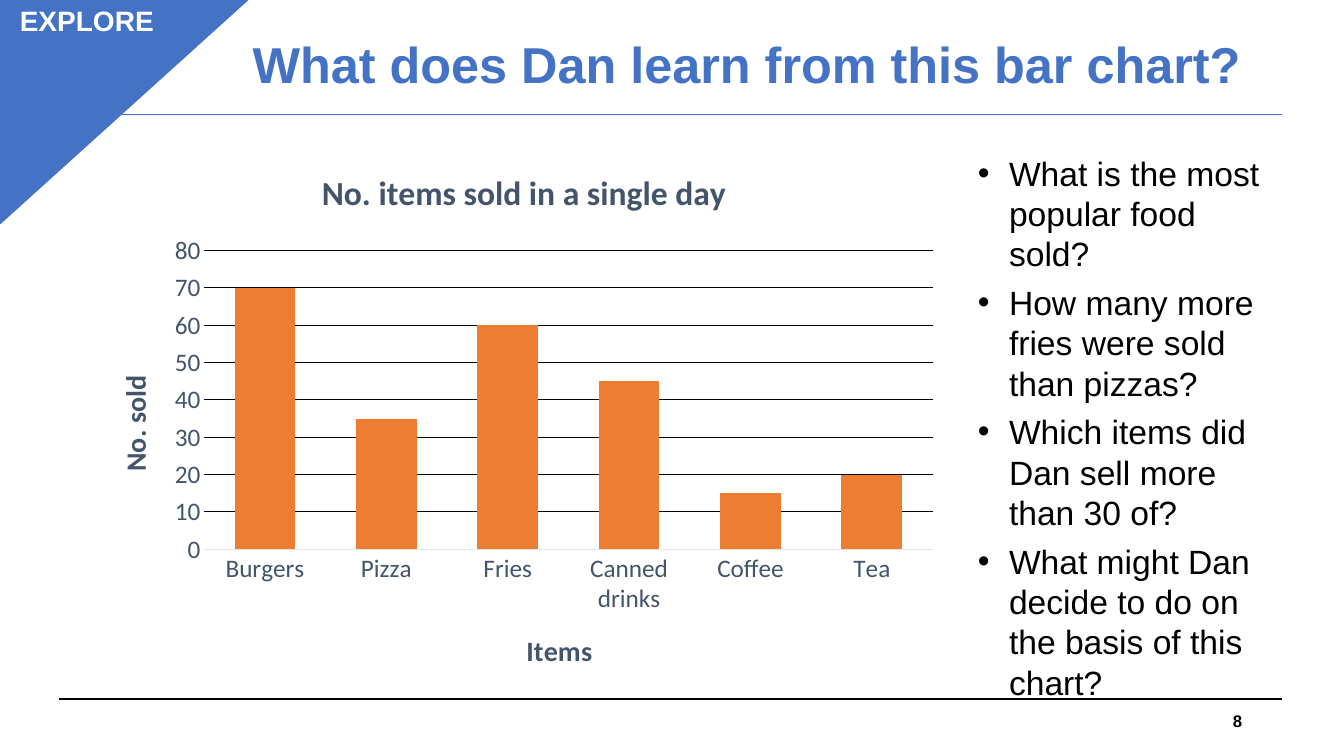
from lxml import etree
from pptx import Presentation
from pptx import util as u
from pptx.chart.data import CategoryChartData
from pptx.dml.color import RGBColor
from pptx.enum import chart as charts
from pptx.enum import shapes, text
from pptx.oxml import parse_xml
from pptx.oxml.ns import nsdecls, qn

BLUE, ORANGE, SLATE = "4472C4", "ED7D31", "44546A"
BLACK, WHITE, PALE = "000000", "FFFFFF", "E0E5EB"

QUESTIONS = [
    "What is the most popular food sold?",
    "How many more fries were sold than pizzas?",
    "Which items did Dan sell more than 30 of?",
    "What might Dan decide to do on the basis of this chart?",
]
SALES = {"Burgers": 70, "Pizza": 35, "Fries": 60,
         "Canned drinks": 45, "Coffee": 15, "Tea": 20}


def colour(code):
    return RGBColor.from_string(code)


def set_font(font, size, code, bold=False, name="Arial"):
    font.name, font.size, font.bold = name, u.Pt(size), bold
    font.color.rgb = colour(code)


class Slide:
    columns, rows = 24, 12

    def __init__(self, deck):
        self.deck = deck
        self.page = deck.slides.add_slide(deck.slide_layouts[1])

    def across(self, count):
        return round(self.deck.slide_width * count / self.columns)

    def down(self, count):
        return round(self.deck.slide_height * count / self.rows)

    def area(self, left, top, width, height):
        return self.across(left), self.down(top), self.across(width), self.down(height)

    def move(self, box, area):
        box.left, box.top, box.width, box.height = self.area(*area)
        frame = box.text_frame
        frame.word_wrap = True
        frame.auto_size = text.MSO_AUTO_SIZE.NONE
        frame.vertical_anchor = text.MSO_ANCHOR.TOP
        return frame

    def title(self, words, area):
        frame = self.move(self.page.shapes.title, area)
        frame.text = words
        para = frame.paragraphs[0]
        para.alignment = text.PP_ALIGN.CENTER
        para.line_spacing = 0.9
        set_font(para.font, 36, BLUE, True)

    def bullets(self, items, area):
        frame = self.move(self.page.placeholders[1], area)
        frame.text = "\n".join(items)
        for para in frame.paragraphs:
            props = para._p.get_or_add_pPr()
            props.set("marL", str(u.Inches(0.31)))
            props.set("indent", str(-u.Inches(0.31)))
            etree.SubElement(props, qn("a:buFont"), typeface="Arial")
            etree.SubElement(props, qn("a:buChar"), char="•")
            para.line_spacing = 1.0
            para.space_before, para.space_after = u.Pt(0), u.Pt(6)
            set_font(para.font, 24, BLACK)

    def label(self, words, area, size, code, align, anchor):
        frame = self.move(self.page.shapes.add_textbox(0, 0, 0, 0), area)
        frame.vertical_anchor = anchor
        para = frame.paragraphs[0]
        para.text, para.alignment = words, align
        set_font(para.font, size, code, True)

    def rule(self, left, right, row, code, weight):
        line = self.page.shapes.add_connector(
            shapes.MSO_CONNECTOR.STRAIGHT,
            self.across(left), self.down(row), self.across(right), self.down(row))
        line.line.color.rgb, line.line.width = colour(code), u.Pt(weight)
        etree.SubElement(line._element.spPr, qn("a:effectLst"))

    def corner(self, area):
        shape = self.page.shapes.add_shape(
            shapes.MSO_SHAPE.ISOSCELES_TRIANGLE, *self.area(*area))
        shape.adjustments[0] = 0
        shape._element.spPr.find(qn("a:xfrm")).set("flipV", "1")
        shape.shadow.inherit = False
        shape.fill.solid()
        shape.fill.fore_color.rgb = shape.line.color.rgb = colour(BLUE)
        shape.line.width = u.Pt(1)

    def place(self, element, after, **shares):
        inner = '<c:layoutTarget val="inner"/>' if "w" in shares else ""
        modes = "".join(f'<c:{side}Mode val="edge"/>' for side in "xy")
        sizes = "".join(f'<c:{key} val="{share}"/>' for key, share in shares.items())
        for old in element.findall(qn("c:layout")):
            element.remove(old)
        layout = parse_xml(f'<c:layout {nsdecls("c")}><c:manualLayout>{inner}{modes}'
                           f'{sizes}</c:manualLayout></c:layout>')
        if after is None:
            element.insert(0, layout)
        else:
            after.addnext(layout)

    def heading(self, owner, words, size, x, y):
        title = owner.chart_title if hasattr(owner, "chart_title") else owner.axis_title
        para = title.text_frame.paragraphs[0]
        para.text = words
        set_font(para.font, size, SLATE, True, "Calibri")
        element = title._element
        self.place(element, element.find(qn("c:tx")), x=x, y=y)

    def column_chart(self, sales, area):
        data = CategoryChartData()
        data.categories = list(sales)
        data.add_series("Series 1", list(sales.values()))
        chart = self.page.shapes.add_chart(
            charts.XL_CHART_TYPE.COLUMN_CLUSTERED, *self.area(*area), data).chart
        chart.has_legend = False
        set_font(chart.font, 10, BLACK, name="Calibri")
        plot = chart.plots[0]
        plot.gap_width, plot.overlap, plot.vary_by_categories = 100, -24, False
        fill = plot.series[0].format.fill
        fill.solid()
        fill.fore_color.rgb = colour(ORANGE)
        items, sold = chart.category_axis, chart.value_axis
        for axis in (items, sold):
            axis.major_tick_mark = axis.minor_tick_mark = charts.XL_TICK_MARK.NONE
            set_font(axis.tick_labels.font, 18, SLATE, name="Calibri")
        items.format.line.color.rgb = colour(PALE)
        items.format.line.width = u.Pt(0.75)
        sold.minimum_scale, sold.maximum_scale, sold.major_unit = 0, 80, 10
        sold.format.line.fill.background()
        grid = sold.major_gridlines.format.line
        grid.color.rgb, grid.width = colour(BLACK), u.Pt(0.75)
        self.heading(chart, "No. items sold in a single day", 24, 0.26, 0.03)
        self.heading(items, "Items", 20, 0.5, 0.88)
        self.heading(sold, "No. sold", 20, 0.02, 0.41)
        area_element = chart._chartSpace.chart.plotArea
        self.place(area_element, None, x=0.13, y=0.19, w=0.85, h=0.55)


def main():
    deck = Presentation()
    deck.slide_width, deck.slide_height = u.Inches(13.33), u.Inches(7.5)
    slide = Slide(deck)
    slide.rule(1.06, 22.9, 11.1, BLACK, 1.5)
    slide.rule(1.06, 22.9, 1.82, BLUE, 0.75)
    slide.label("8", (16.96, 11.12, 5.4, 0.64), 12, BLACK,
                text.PP_ALIGN.RIGHT, text.MSO_ANCHOR.MIDDLE)
    slide.title("What does Dan learn from this bar chart?", (2.99, 0.56, 20.7, 1.17))
    slide.column_chart(SALES, (1.66, 2.34, 15.3, 8.62))
    slide.bullets(QUESTIONS, (17.28, 2.34, 5.63, 8.7))
    slide.corner((0, -0.08, 4.52, 3.63))
    slide.label("EXPLORE", (-0.43, -0.02, 3.96, 0.7), 20, WHITE,
                text.PP_ALIGN.CENTER, text.MSO_ANCHOR.TOP)
    deck.save("out.pptx")


if __name__ == "__main__":
    main()
